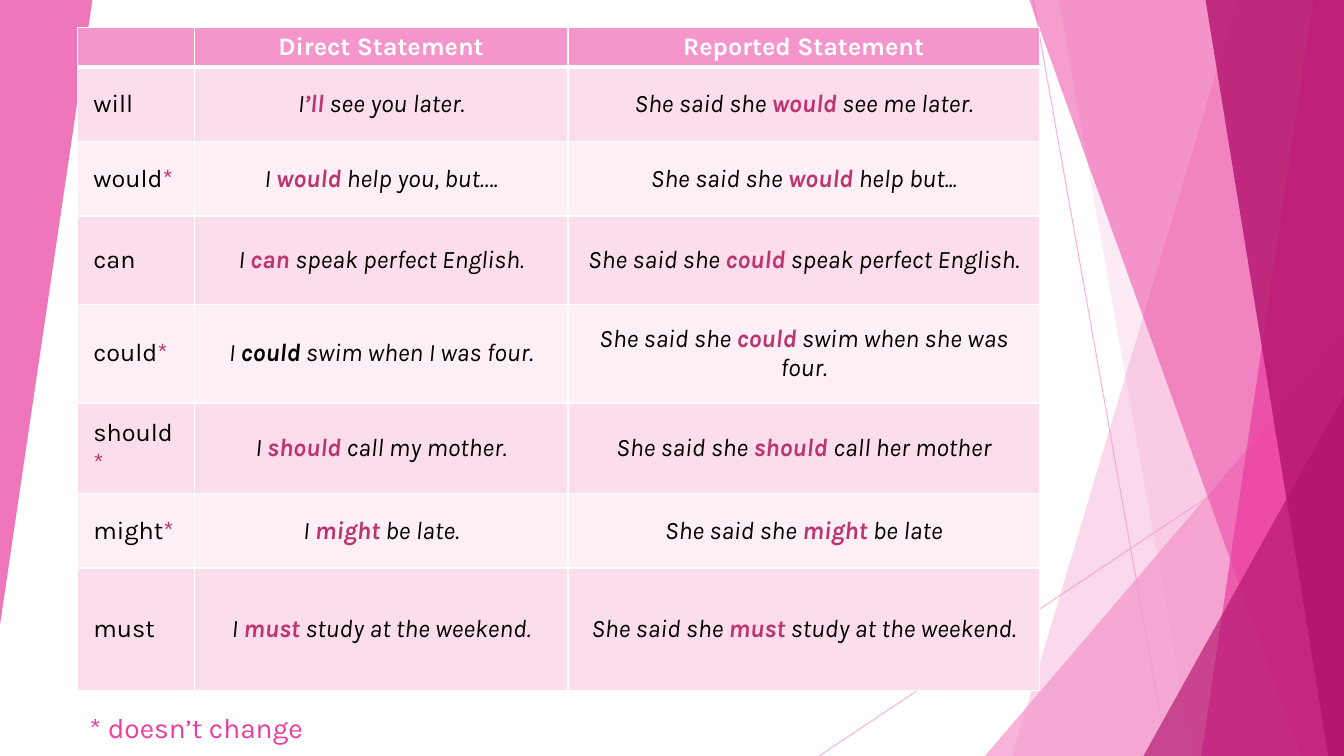
from pptx import Presentation
from pptx import util as u
from pptx.dml.color import RGBColor
from pptx.enum import shapes, text
from pptx.oxml.ns import qn
from lxml import etree

PX = 9525  # 1280 x 720 px slide
W, H = 1280, 720
THEME = dict(
    font="Karla", cell_size=u.Pt(18), note_size=u.Pt(20),
    white="FFFFFF", black="000000", accent="BC356F",
    light="F496CB", pink="EB3D9F", deep="B2136D",
    bands=("FBDDEC", "FDEFF6"),
)


def paint(fill, color, opacity=100):
    """Solid fill with an opacity in percent; also serves a line's fill."""
    fill.solid()
    fill.fore_color.rgb = RGBColor.from_string(color)
    if opacity < 100:
        clr = fill._xPr.find(".//" + qn("a:srgbClr"))
        etree.SubElement(clr, qn("a:alpha"), val=str(opacity * 1000))


def border(cell, side, width):
    """White border; side is L, R, T or B and width is in points."""
    ln = etree.Element(qn("a:ln" + side), w=str(u.Pt(width)))
    solid = etree.SubElement(ln, qn("a:solidFill"))
    etree.SubElement(solid, qn("a:srgbClr"), val=THEME["white"])
    tcPr = cell._tc.get_or_add_tcPr()
    tcPr.insert(len(tcPr.findall("*")), ln)


prs = Presentation()
prs.slide_width, prs.slide_height = W * PX, H * PX
s = prs.slides.add_slide(prs.slide_layouts[6])

# Thin lines behind the facets
for ends in ((984, 0, 1112, 720), (1280, 387, 780, 720)):
    line = s.shapes.add_connector(shapes.MSO_CONNECTOR.STRAIGHT, *(v * PX for v in ends))
    line.line.width = u.Pt(0.75)
    paint(line.line.fill, THEME["light"], 70)
    etree.SubElement(line._element.spPr, qn("a:effectLst"))

# Facets: a band gives its left edge (top x, bottom x), a triangle its box
facets = [
    ("band", (1179, 964), "light", 36),
    ("band", (1008, 1136), "light", 20),
    ("triangle", (938, 320, 342, 400), "light", 72),
    ("band", (980, 1239), "pink", 50),
    ("band", (1251, 1144), "pink", 70),
    ("band", (1148, 1265), "deep", 80),
    ("triangle", (1089, 377, 191, 343), "deep", 66),
    ("triangle", (0, 0, 88, 595), "pink", 70),
]
for kind, place, color, opacity in facets:
    if kind == "band":
        top, bottom = place
        fb = s.shapes.build_freeform(top, -1, scale=PX)
        fb.add_line_segments([(W, -1), (W, H), (bottom, H)], close=True)
        sp = fb.convert_to_shape()
    else:
        sp = s.shapes.add_shape(shapes.MSO_SHAPE.ISOSCELES_TRIANGLE, *(v * PX for v in place))
        sp.adjustments[0] = 1
        sp.rotation = 180 if place[0] == 0 else 0
    paint(sp.fill, THEME[color], opacity)
    sp.line.fill.background()
    sp.shadow.inherit = False

# Table: | marks the stressed words
rows = [
    (37, "", "Direct Statement", "Reported Statement"),
    (71, "will", "I|’ll| see you later.", "She said she |would| see me later."),
    (71, "would|*", "I |would| help you, but….", "She said she |would| help but..."),
    (84, "can", "I |can |speak perfect English.", "She said she |could| speak perfect English."),
    (94, "could|*", "I |could| swim when I was four.", "She said she |could| swim when she was four."),
    (71, "should|*", "I |should| call my mother.", "She said she |should |call her mother"),
    (71, "might|*", "I |might| be late.", "She said she |might| be late"),
    (117, "must", "I |must| study at the weekend.", "She said she |must| study at the weekend."),
]
widths = (111, 356, 449)
heights = [row[0] for row in rows]
table = s.shapes.add_table(
    len(rows), len(widths), 74 * PX, 26 * PX, sum(widths) * PX, sum(heights) * PX).table
for column, width in zip(table.columns, widths):
    column.width = width * PX

for i, (height, *words) in enumerate(rows):
    table.rows[i].height = height * PX
    header = i == 0
    for j, phrase in enumerate(words):
        cell = table.cell(i, j)
        for side in "LRTB":
            thick = (i, side) in ((0, "B"), (1, "T"))
            border(cell, side, 3 if thick else 1)
        paint(cell.fill, THEME["light"] if header else THEME["bands"][(i - 1) % 2])
        if not header:
            cell.vertical_anchor = text.MSO_ANCHOR.MIDDLE
            cell.margin_left = cell.margin_right = 15 * PX
            cell.margin_top = cell.margin_bottom = 15 * PX
        p = cell.text_frame.paragraphs[0]
        p.font.size, p.font.name = THEME["cell_size"], THEME["font"]
        if header or j > 0:
            p.alignment = text.PP_ALIGN.CENTER
        for k, part in enumerate(phrase.split("|") if phrase else ()):
            stressed = k == 1
            r = p.add_run()
            r.text = part
            r.font.size, r.font.name = THEME["cell_size"], THEME["font"]
            r.font.bold = header or (stressed and j > 0)
            r.font.italic = not header and j > 0
            plain = phrase.startswith("I |could|")
            color = "white" if header else "accent" if stressed and not plain else "black"
            r.font.color.rgb = RGBColor.from_string(THEME[color])

# Footnote
tf = s.shapes.add_textbox(76 * PX, 540 * PX, 815 * PX, 173 * PX).text_frame
tf.word_wrap = True
tf.vertical_anchor = text.MSO_ANCHOR.BOTTOM
p = tf.paragraphs[0]
r = p.add_run()
r.text = "* doesn’t change"
r.font.size, r.font.name = THEME["note_size"], THEME["font"]
r.font.color.rgb = RGBColor.from_string(THEME["pink"])

prs.save("out.pptx")
